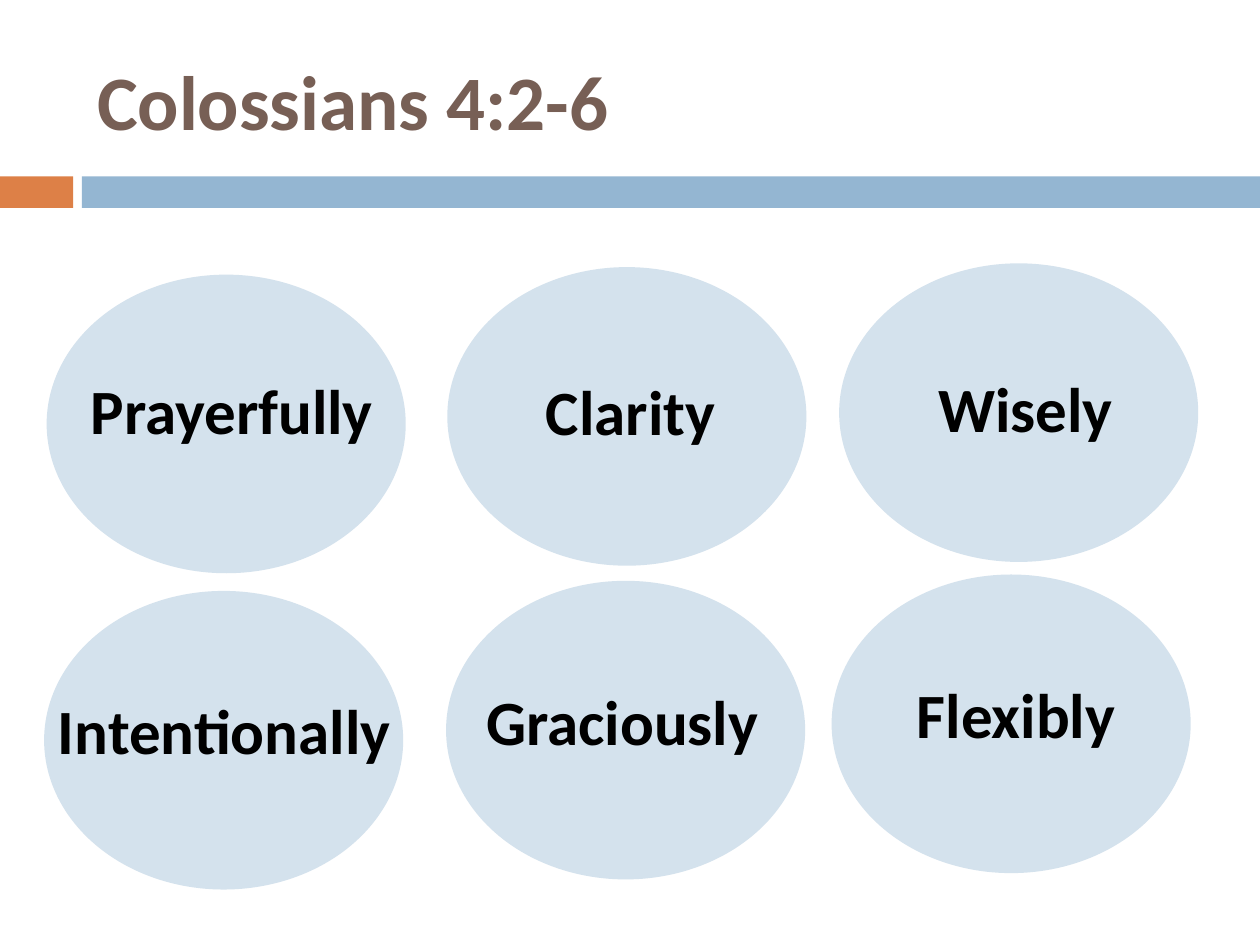
from pptx import Presentation
from pptx.dml.color import RGBColor
from pptx.enum.shapes import MSO_SHAPE as Shape
from pptx.enum.text import MSO_ANCHOR as Anchor, MSO_AUTO_SIZE as AutoSize, PP_ALIGN as Align
from pptx.util import Inches, Pt

WIDTH, HEIGHT = 10, 7.5
BROWN = RGBColor(0x77, 0x5F, 0x55)
ORANGE = RGBColor(0xDD, 0x80, 0x47)
BLUE = RGBColor(0x94, 0xB6, 0xD2)
PALE_BLUE = RGBColor(0xD4, 0xE2, 0xED)
BLACK = RGBColor(0, 0, 0)
FONT = "Calibri"

BAR_TOP, BAR_HEIGHT = 1.4, 0.25
BAR_SPLIT, BAR_GAP = 0.58, 0.07
OVAL_WIDTH, OVAL_HEIGHT = 2.85, 2.37
LABEL_HEIGHT = 0.71

# Word, oval (left, top), label (left, top, width); the ovals are loosely scattered
QUALITIES = [
    ("Prayerfully", (0.37, 2.18), (0.58, 2.9, 2.52)),
    ("Clarity", (3.55, 2.12), (3.6, 2.91, 2.81)),
    ("Wisely", (6.66, 2.09), (7.34, 2.88, 1.6)),
    ("Intentionally", (0.35, 4.69), (0.36, 5.44, 2.84)),
    ("Graciously", (3.54, 4.61), (3.71, 5.37, 2.46)),
    ("Flexibly", (6.6, 4.56), (7.13, 5.31, 1.87)),
]


def inches(*lengths):
    return [Inches(length) for length in lengths]


def style_text(para, size, color, align=Align.LEFT):
    para.alignment = align
    font = para.font
    font.name, font.size, font.bold = FONT, Pt(size), True
    font.color.rgb = color


def add_title(page, text):
    title = page.shapes.title
    title.left, title.top, title.width, title.height = inches(0.67, 0.25, 8.92, 1.08)
    frame = title.text_frame
    frame.text = text
    frame.auto_size = AutoSize.NONE
    frame.vertical_anchor = Anchor.MIDDLE
    style_text(frame.paragraphs[0], 44, BROWN)


def add_filled(page, kind, color, left, top, width, height):
    shape = page.shapes.add_shape(kind, *inches(left, top, width, height))
    shape.shadow.inherit = False
    shape.fill.solid()
    shape.fill.fore_color.rgb = color
    shape.line.fill.background()


def add_divider(page):
    blue_left = BAR_SPLIT + BAR_GAP
    add_filled(page, Shape.RECTANGLE, ORANGE, 0, BAR_TOP, BAR_SPLIT, BAR_HEIGHT)
    add_filled(page, Shape.RECTANGLE, BLUE, blue_left, BAR_TOP,
               WIDTH - blue_left, BAR_HEIGHT)


def add_label(page, word, left, top, width):
    box = page.shapes.add_textbox(*inches(left, top, width, LABEL_HEIGHT))
    frame = box.text_frame
    frame.text = word
    frame.word_wrap = False
    frame.auto_size = AutoSize.SHAPE_TO_FIT_TEXT
    style_text(frame.paragraphs[0], 36, BLACK, Align.CENTER)


def main():
    deck = Presentation()
    deck.slide_width, deck.slide_height = inches(WIDTH, HEIGHT)
    page = deck.slides.add_slide(deck.slide_layouts.get_by_name("Title Only"))
    add_divider(page)
    add_title(page, "Colossians 4:2-6")
    for word, oval_corner, label_place in QUALITIES:
        add_filled(page, Shape.OVAL, PALE_BLUE, *oval_corner, OVAL_WIDTH, OVAL_HEIGHT)
        add_label(page, word, *label_place)
    deck.save("out.pptx")


if __name__ == "__main__":
    main()
